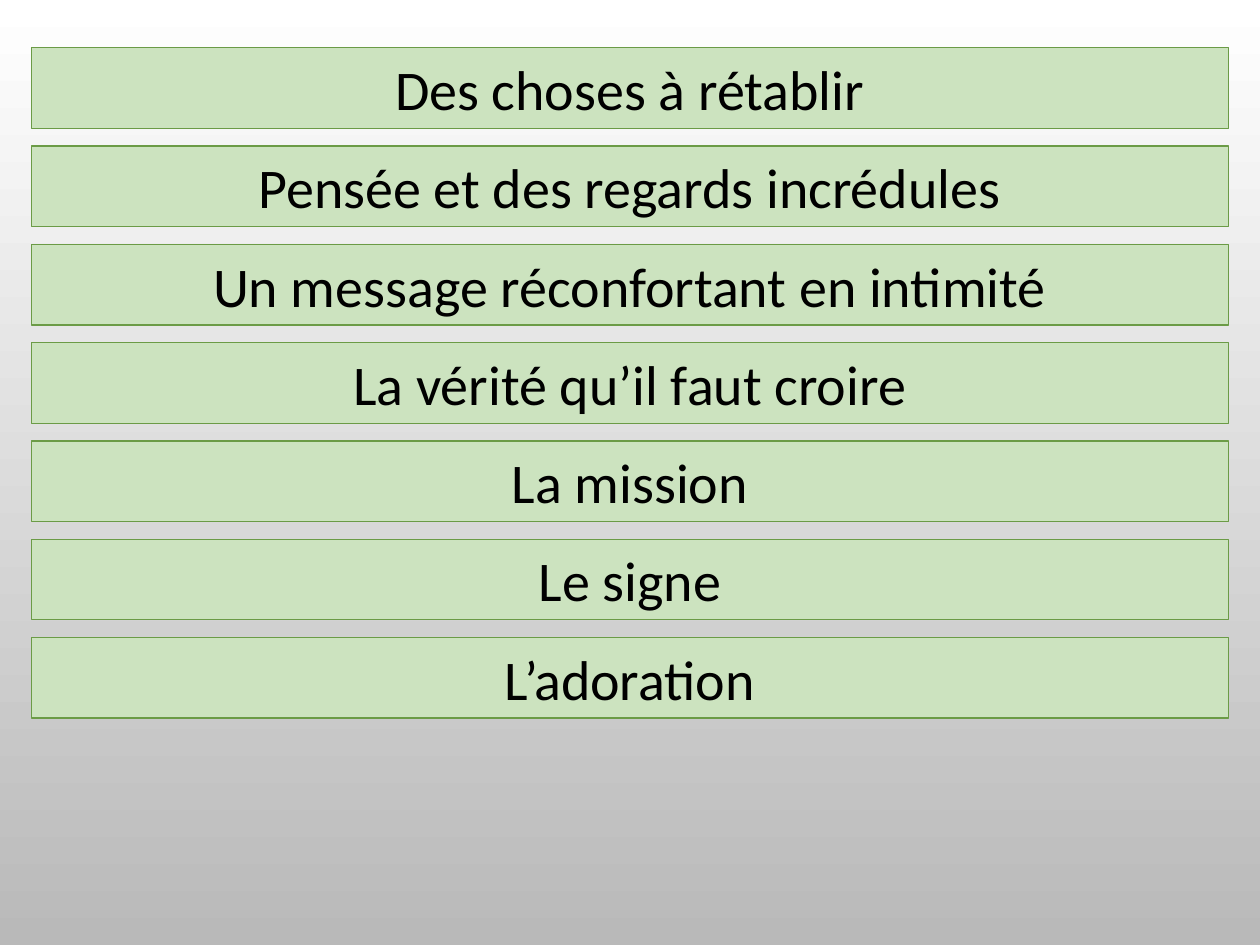
from pptx import Presentation, util as u
from pptx.dml.color import RGBColor
from pptx.enum import shapes, text

THEMES = [
    "Des choses à rétablir",
    "Pensée et des regards incrédules",
    "Un message réconfortant en intimité",
    "La vérité qu’il faut croire",
    "La mission",
    "Le signe",
    "L’adoration",
]
COLOURS = {
    "sky": "FFFFFF",
    "ground": "B9B9B9",
    "band": "CCE3BF",
    "edge": "6B9B46",
    "ink": "000000",
}
WIDTH, HEIGHT = 10, 7.5
MARGIN, TOP = 0.25, 0.38
BAND_HEIGHT, PITCH = 0.64, 0.78


def colour(name):
    return RGBColor.from_string(COLOURS[name])


def paint_background(slide):
    fill = slide.background.fill
    fill.gradient()
    fill.gradient_angle = 270
    for stop, name, position in zip(fill.gradient_stops, ("sky", "ground"), (0, 1)):
        stop.color.rgb = colour(name)
        stop.position = position


def add_band(slide, row, theme):
    band = slide.shapes.add_shape(
        shapes.MSO_SHAPE.RECTANGLE,
        u.Inches(MARGIN),
        u.Inches(TOP + row * PITCH),
        u.Inches(WIDTH - 2 * MARGIN),
        u.Inches(BAND_HEIGHT),
    )
    band.shadow.inherit = False
    band.fill.solid()
    band.fill.fore_color.rgb = colour("band")
    band.line.color.rgb = colour("edge")
    band.line.width = u.Pt(0.75)
    frame = band.text_frame
    frame.word_wrap = True
    frame.auto_size = text.MSO_AUTO_SIZE.SHAPE_TO_FIT_TEXT
    paragraph = frame.paragraphs[0]
    paragraph.alignment = text.PP_ALIGN.CENTER
    run = paragraph.add_run()
    run.text = theme
    run.font.name = "Calibri"
    run.font.size = u.Pt(32)
    run.font.color.rgb = colour("ink")


def main():
    deck = Presentation()
    deck.slide_width, deck.slide_height = u.Inches(WIDTH), u.Inches(HEIGHT)
    slide = deck.slides.add_slide(deck.slide_layouts[6])
    paint_background(slide)
    for row, theme in enumerate(THEMES):
        add_band(slide, row, theme)
    deck.save("out.pptx")


if __name__ == "__main__":
    main()
